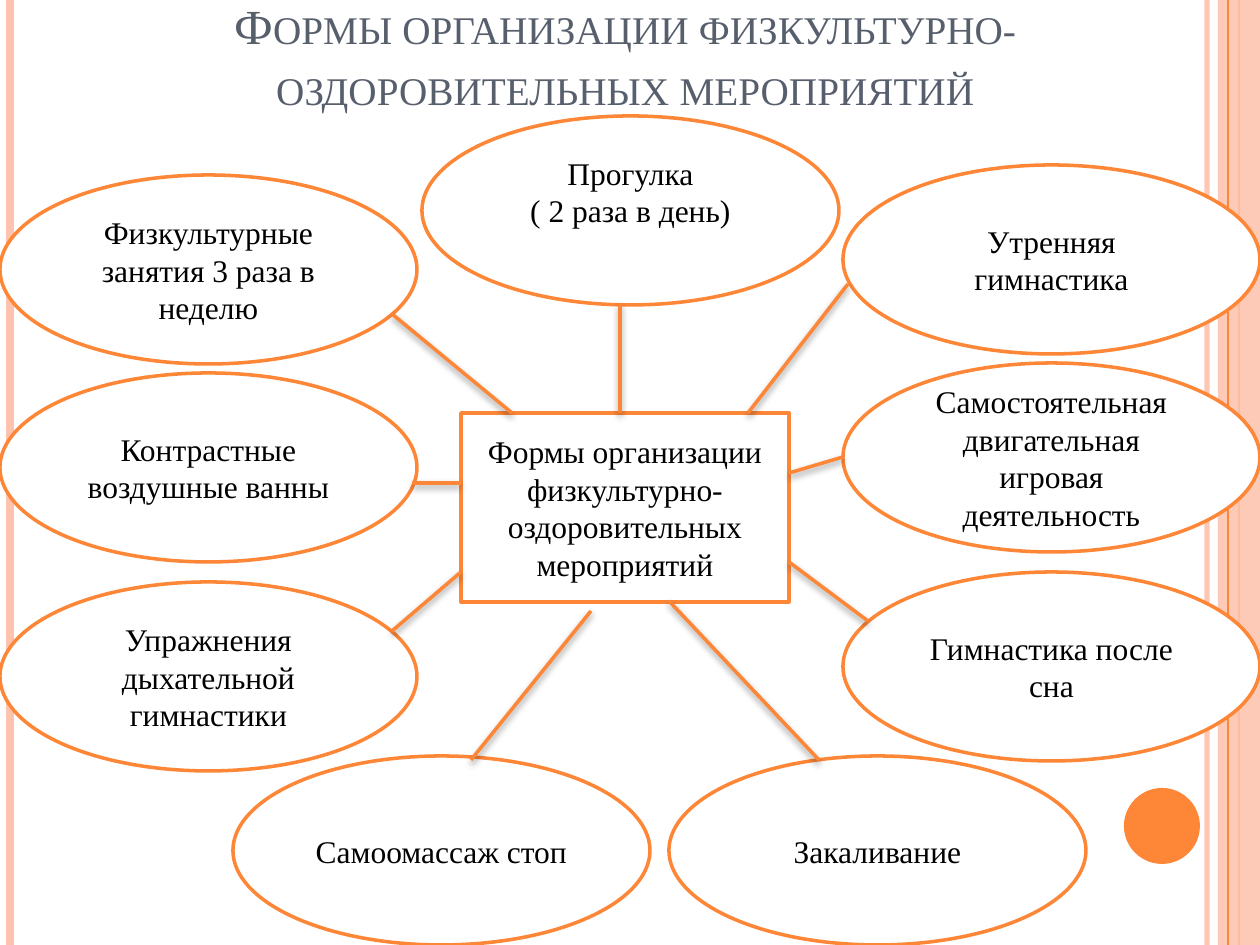
from typing import NamedTuple

from lxml.etree import SubElement
from pptx import Presentation
from pptx.dml.color import RGBColor
from pptx.enum.shapes import MSO_CONNECTOR, MSO_SHAPE
from pptx.enum.text import MSO_ANCHOR, MSO_AUTO_SIZE, PP_ALIGN
from pptx.oxml.ns import qn
from pptx.util import Emu, Pt

PX_PER_INCH = 126
WIDTH, HEIGHT = 1260, 945
FONT = "Times New Roman"
ORANGE, PEACH, WHITE, BLACK, SLATE = "FE8637", "FEC3AE", "FFFFFF", "000000", "575F6D"
OVAL_WIDTH, OVAL_HEIGHT = 417, 189
INSET_X, INSET_Y = 13, 6
LEFT_COLUMN, RIGHT_COLUMN, BOTTOM_ROW = 0, 843, 756


class Activity(NamedTuple):
    left: int
    top: int
    lines: tuple[str, ...]
    bottom_inset: int = INSET_Y


class Stripe(NamedTuple):
    x: int
    color: str
    points: float
    opacity: int = 100


class Spoke(NamedTuple):
    x1: int
    y1: int
    x2: int
    y2: int


STRIPES = [
    Stripe(1207, PEACH, 3, 93),
    Stripe(10, PEACH, 4.5),
    Stripe(1239, ORANGE, 1.5),
]
EDGE_STRIPE = Stripe(1228, ORANGE, 0.75)

ACTIVITIES = [
    Activity(LEFT_COLUMN, 175, ("Физкультурные занятия 3 раза в неделю",)),
    Activity(422, 116, ("Прогулка", "( 2 раза в день)"), 44),
    Activity(RIGHT_COLUMN, 165, ("Утренняя гимнастика",)),
    Activity(RIGHT_COLUMN, 363, ("Самостоятельная двигательная игровая деятельность",)),
    Activity(669, BOTTOM_ROW, ("Закаливание",)),
    Activity(RIGHT_COLUMN, 572, ("Гимнастика после сна",)),
    Activity(233, BOTTOM_ROW, ("Самоомассаж стоп",)),
    Activity(LEFT_COLUMN, 582, ("Упражнения дыхательной гимнастики",)),
    Activity(LEFT_COLUMN, 373, ("Контрастные воздушные ванны",)),
]

SPOKES = [
    Spoke(591, 611, 471, 760),
    Spoke(669, 601, 819, 760),
    Spoke(461, 572, 392, 631),
    Spoke(848, 284, 748, 413),
    Spoke(843, 457, 789, 473),
    Spoke(789, 562, 868, 621),
    Spoke(620, 304, 620, 413),
    Spoke(512, 413, 392, 314),
    Spoke(461, 483, 412, 483),
]


def px(value: int) -> Emu:
    return Emu(round(value * 914400 / PX_PER_INCH))


def rgb(color: str) -> RGBColor:
    return RGBColor.from_string(color)


def set_opacity(fill, percent: int) -> None:
    """Add an alpha value to a solid fill that already has its colour."""
    color = fill._xPr.find(qn("a:solidFill"))[0]
    SubElement(color, qn("a:alpha"), val=str(percent * 1000))


def add_line(slide, spoke: Spoke, color: str, points: float):
    line = slide.shapes.add_connector(MSO_CONNECTOR.STRAIGHT, *map(px, spoke))
    line.line.color.rgb = rgb(color)
    line.line.width = Pt(points)
    effects = SubElement(line._element.spPr, qn("a:effectLst"))
    return line, effects


def add_stripe(slide, stripe: Stripe) -> None:
    line, _ = add_line(slide, Spoke(stripe.x, 0, stripe.x, HEIGHT), stripe.color, stripe.points)
    if stripe.opacity < 100:
        set_opacity(line.line.fill, stripe.opacity)


def add_spoke(slide, spoke: Spoke) -> None:
    _, effects = add_line(slide, spoke, ORANGE, 2)
    shadow = SubElement(effects, qn("a:outerShdw"), blurRad=str(Pt(4)), dist=str(Pt(2)),
                        dir="5400000", rotWithShape="0")
    color = SubElement(shadow, qn("a:srgbClr"), val=BLACK)
    SubElement(color, qn("a:alpha"), val="40000")


def add_filled_shape(slide, kind: MSO_SHAPE, box: tuple[int, int, int, int], color: str):
    shape = slide.shapes.add_shape(kind, *map(px, box))
    shape.shadow.inherit = False
    shape.fill.solid()
    shape.fill.fore_color.rgb = rgb(color)
    shape.line.fill.background()
    return shape


def write_run(paragraph, text: str, size: int, color: str):
    paragraph.alignment = PP_ALIGN.CENTER
    run = paragraph.add_run()
    run.text = text
    run.font.name = FONT
    run.font.size = Pt(size)
    run.font.color.rgb = rgb(color)
    return run


def add_label(slide, kind: MSO_SHAPE, box: tuple[int, int, int, int],
              lines: tuple[str, ...], bottom_inset: int = INSET_Y) -> None:
    shape = add_filled_shape(slide, kind, box, WHITE)
    shape.line.color.rgb = rgb(ORANGE)
    shape.line.width = Pt(2)
    frame = shape.text_frame
    frame.word_wrap = True
    frame.vertical_anchor = MSO_ANCHOR.MIDDLE
    frame.margin_left = frame.margin_right = px(INSET_X)
    frame.margin_top, frame.margin_bottom = px(INSET_Y), px(bottom_inset)
    for index, line in enumerate(lines):
        paragraph = frame.add_paragraph() if index else frame.paragraphs[0]
        write_run(paragraph, line, 18, BLACK)


def add_background(slide) -> None:
    for stripe in STRIPES:
        add_stripe(slide, stripe)
    band = add_filled_shape(slide, MSO_SHAPE.RECTANGLE, (1218, 0, 42, HEIGHT), PEACH)
    set_opacity(band.fill, 87)
    add_stripe(slide, EDGE_STRIPE)
    add_filled_shape(slide, MSO_SHAPE.OVAL, (1124, 788, 76, 76), ORANGE)


def write_title(slide) -> None:
    title = slide.shapes.title
    title.left, title.top, title.width, title.height = map(px, (64, 0, 1123, 122))
    frame = title.text_frame
    frame.auto_size = MSO_AUTO_SIZE.NONE
    frame.word_wrap = True
    frame.vertical_anchor = MSO_ANCHOR.BOTTOM
    paragraph = frame.paragraphs[0]
    paragraph.line_spacing = 1.05
    run = write_run(paragraph, "Формы организации физкультурно-оздоровительных мероприятий",
                    28, SLATE)
    run.font._element.set("cap", "small")


def main() -> None:
    presentation = Presentation()
    presentation.slide_width, presentation.slide_height = px(WIDTH), px(HEIGHT)
    slide = presentation.slides.add_slide(presentation.slide_layouts[5])
    add_background(slide)
    write_title(slide)
    for activity in ACTIVITIES:
        box = (activity.left, activity.top, OVAL_WIDTH, OVAL_HEIGHT)
        add_label(slide, MSO_SHAPE.OVAL, box, activity.lines, activity.bottom_inset)
    add_label(slide, MSO_SHAPE.RECTANGLE, (461, 413, 328, OVAL_HEIGHT),
              ("Формы организации физкультурно-оздоровительных мероприятий",))
    for spoke in SPOKES:
        add_spoke(slide, spoke)
    presentation.save("out.pptx")


if __name__ == "__main__":
    main()
